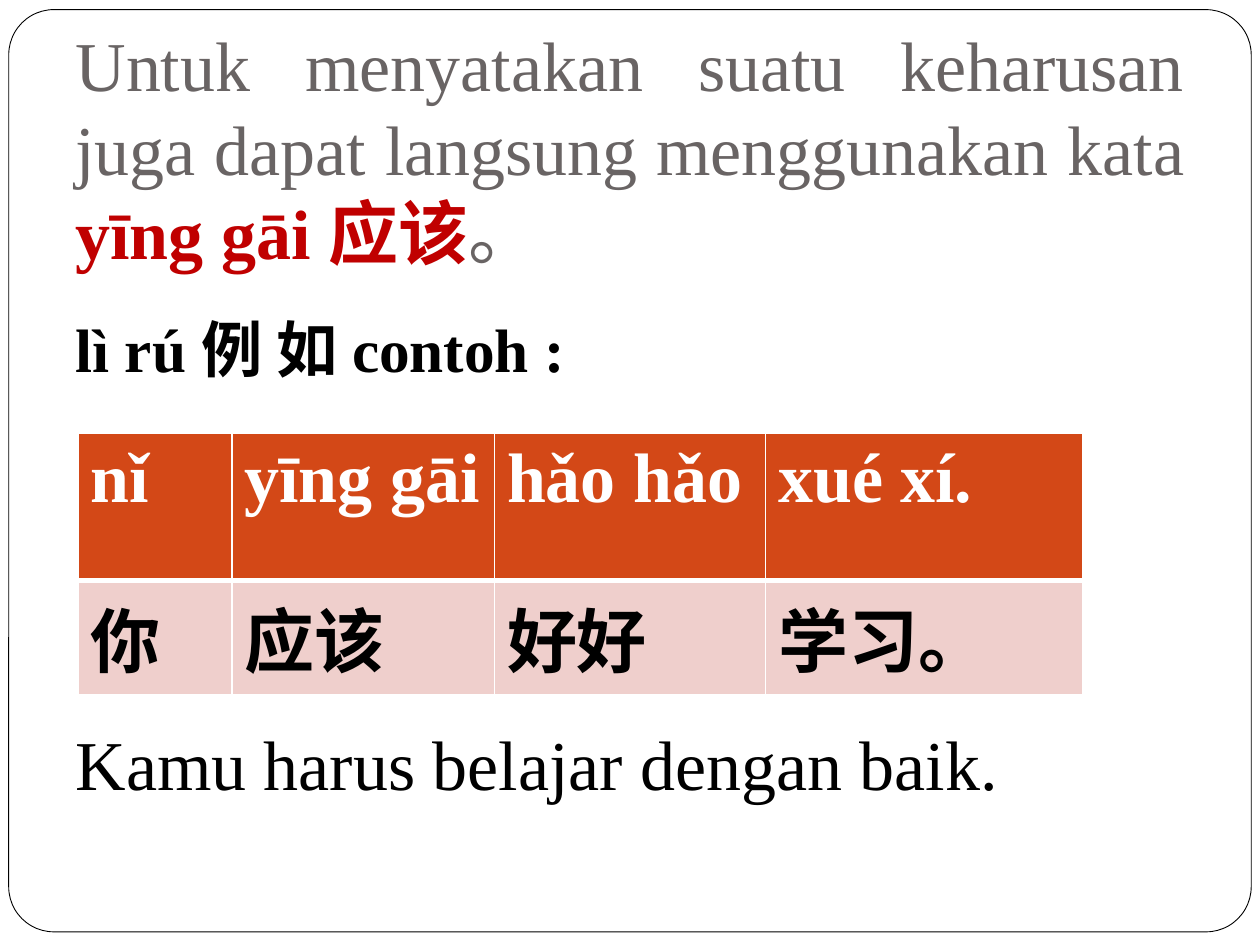
from lxml import etree
from pptx import Presentation
from pptx.dml.color import RGBColor
from pptx.enum.shapes import MSO_SHAPE
from pptx.enum.text import MSO_ANCHOR, PP_ALIGN
from pptx.oxml.ns import qn
from pptx.util import Pt

ROUNDED = MSO_SHAPE.ROUNDED_RECTANGLE
BOTTOM, TOP = MSO_ANCHOR.BOTTOM, MSO_ANCHOR.TOP
LEFT, JUSTIFY = PP_ALIGN.LEFT, PP_ALIGN.JUSTIFY

WHITE = RGBColor(0xFF, 0xFF, 0xFF)
BLACK = RGBColor(0x00, 0x00, 0x00)
GREY = RGBColor(0x69, 0x64, 0x64)
RED = RGBColor(0xC0, 0x00, 0x00)
ORANGE = RGBColor(0xD3, 0x48, 0x17)
PINK = RGBColor(0xEF, 0xCF, 0xCC)
FONT = "Times New Roman"


def add_run(paragraph, text, size, color, bold):
    run = paragraph.add_run()
    run.text = text
    run.font.name = FONT
    run.font.size = Pt(size)
    run.font.color.rgb = color
    run.font.bold = bold


def add_border(cell, side, width):
    properties = cell._tc.get_or_add_tcPr()
    line = etree.Element(qn("a:" + side), w=str(Pt(width)))
    fill = etree.SubElement(line, qn("a:solidFill"))
    etree.SubElement(fill, qn("a:srgbClr"), val=str(WHITE))
    properties.append(line)


presentation = Presentation()
presentation.slide_width = Pt(720)
presentation.slide_height = Pt(540)
slide = presentation.slides.add_slide(presentation.slide_layouts[1])

# Rounded frame behind everything
frame = slide.shapes.add_shape(ROUNDED, Pt(5), Pt(5.5), Pt(710), Pt(527))
frame.adjustments[0] = 0.049
frame.shadow.inherit = False
frame.fill.solid()
frame.fill.fore_color.rgb = WHITE
frame.line.color.rgb = BLACK
frame.line.width = Pt(0.5)
slide.shapes._spTree.insert(2, frame._element)

# Title
title = slide.shapes.title
title.left, title.top, title.width, title.height = Pt(36), Pt(21.6), Pt(648), Pt(142)
title_frame = title.text_frame
title_frame.vertical_anchor = BOTTOM
title_frame.margin_bottom = Pt(7.2)
paragraph = title_frame.paragraphs[0]
paragraph.alignment = JUSTIFY
add_run(paragraph, "Untuk menyatakan suatu keharusan juga dapat langsung menggunakan kata ",
        40, GREY, False)
add_run(paragraph, "yīng gāi 应该", 40, RED, True)
add_run(paragraph, "。", 40, GREY, False)

# Example heading and translation, with room for the table between them
body = slide.placeholders[1]
body.left, body.top, body.width, body.height = Pt(36), Pt(174), Pt(648), Pt(326)
body_frame = body.text_frame
body_frame.vertical_anchor = TOP
body_lines = [
    ("lì rú 例 如 contoh :", 35, True, 5.8),
    ("Kamu harus belajar dengan baik.", 40, False, 192),
]
for index, (text, size, bold, space_before) in enumerate(body_lines):
    paragraph = body_frame.add_paragraph() if index else body_frame.paragraphs[0]
    paragraph.alignment = LEFT
    paragraph.space_before = Pt(space_before)
    properties = paragraph._p.get_or_add_pPr()
    properties.set("marL", str(Pt(21.6)))
    properties.set("indent", str(Pt(-21.6)))
    etree.SubElement(properties, qn("a:buNone"))
    add_run(paragraph, text, size, BLACK, bold)

# Example sentence: pinyin above characters
rows = [
    (["nǐ", "yīng gāi", "hǎo hǎo", "xué xí."], 84, ORANGE, WHITE),
    (["你", "应该", "好好", "学习。"], 45, PINK, BLACK),
]
column_widths = [88, 150, 155, 181]
table = slide.shapes.add_table(len(rows), len(column_widths), Pt(44.6), Pt(247.7),
                               Pt(sum(column_widths)), Pt(129)).table
for column, width in zip(table.columns, column_widths):
    column.width = Pt(width)
for row_index, (words, height, fill_color, text_color) in enumerate(rows):
    table.rows[row_index].height = Pt(height)
    for column_index, word in enumerate(words):
        cell = table.cell(row_index, column_index)
        for side in ("lnL", "lnR", "lnT", "lnB"):
            header_edge = (row_index, side) in ((0, "lnB"), (1, "lnT"))
            add_border(cell, side, 3 if header_edge else 1)
        cell.fill.solid()
        cell.fill.fore_color.rgb = fill_color
        add_run(cell.text_frame.paragraphs[0], word, 40, text_color, True)

presentation.save("out.pptx")
